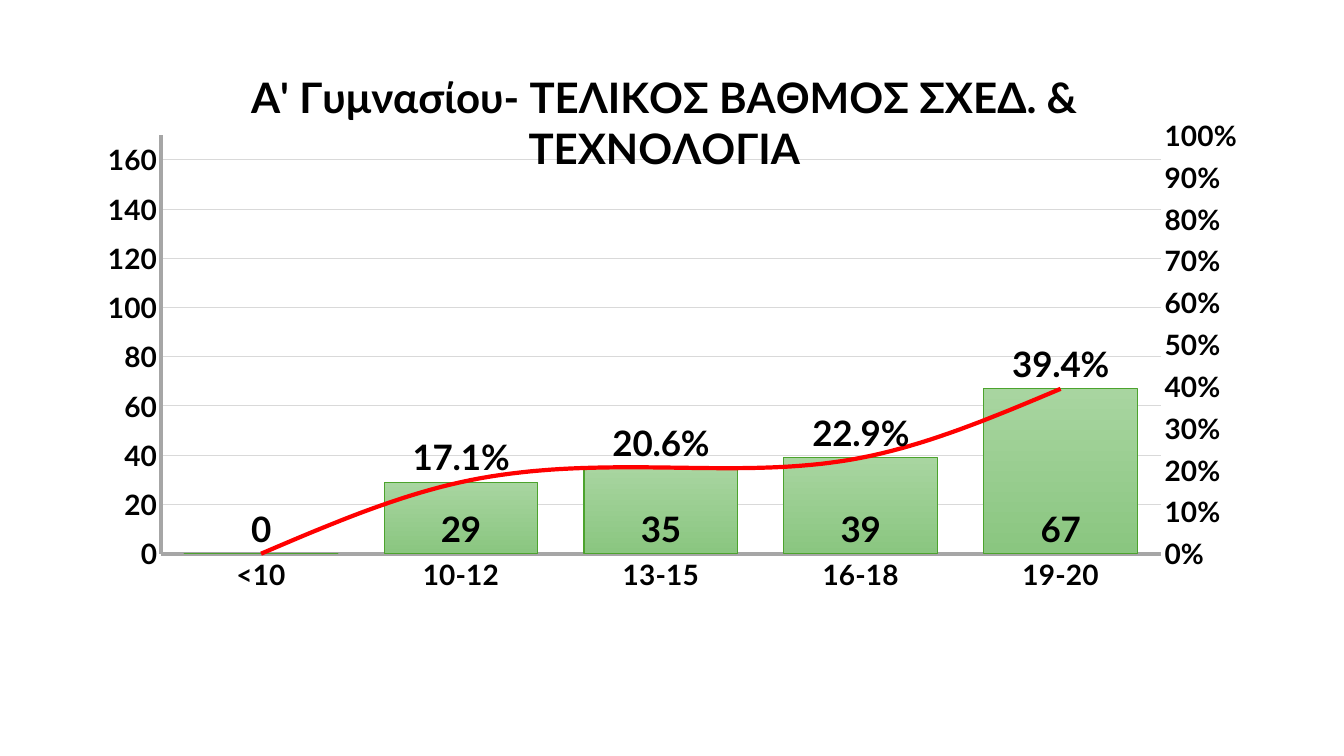
from copy import deepcopy

from lxml import etree
from pptx import Presentation
from pptx.chart.axis import ValueAxis
from pptx.chart.data import CategoryChartData
from pptx.dml.color import RGBColor
from pptx.enum.chart import XL_CHART_TYPE, XL_LABEL_POSITION, XL_MARKER_STYLE, XL_TICK_MARK
from pptx.oxml import parse_xml
from pptx.oxml.ns import nsdecls, qn
from pptx.util import Inches, Pt

COLUMN = XL_CHART_TYPE.COLUMN_CLUSTERED
BASE, ABOVE = XL_LABEL_POSITION.INSIDE_BASE, XL_LABEL_POSITION.ABOVE
NO_MARK = XL_MARKER_STYLE.NONE
NO_TICK = XL_TICK_MARK.NONE
FONT = "Lato"
BLACK, GREY, PALE, RED, GREEN = "000000", "A6A6A6", "D9D9D9", "FF0000", "4CA32D"
SHADES = "A8D5A0", "8AC680"
TITLE = "A' Γυμνασίου- ΤΕΛΙΚΟΣ ΒΑΘΜΟΣ ΣΧΕΔ. & ΤΕΧΝΟΛΟΓΙΑ"
GRADES = "<10", "10-12", "13-15", "16-18", "19-20"
COUNTS = 0, 29, 35, 39, 67
SHARES = 0, 0.171, 0.206, 0.229, 0.394


def color(text):
    return RGBColor.from_string(text)


def style(font, size, bold=True, hue=BLACK):
    font.name, font.size, font.bold = FONT, Pt(size), bold
    font.color.rgb = color(hue)


def write(frame, text, **look):
    run = frame.paragraphs[0].add_run()
    run.text = text
    style(run.font, **look)


def stroke(line, hue, width):
    line.color.rgb = color(hue)
    line.width = Pt(width)


def arrange(node, spot, inner=False, **sides):
    old = node.find(qn("c:layout"))
    if old is not None:
        node.remove(old)
    target = '<c:layoutTarget val="inner"/>' if inner else ""
    modes = "".join(f'<c:{side}Mode val="edge"/>' for side in sides if side in "xy")
    sizes = "".join(f'<c:{side} val="{size}"/>' for side, size in sides.items())
    node.insert(spot, parse_xml(
        f'<c:layout {nsdecls("c")}><c:manualLayout>{target}{modes}{sizes}'
        '</c:manualLayout></c:layout>'))


def set_axis(axis, low=None, high=None):
    axis.major_tick_mark = axis.minor_tick_mark = NO_TICK
    style(axis.tick_labels.font, 20)
    stroke(axis.format.line, GREY, 3)
    if high is not None:
        axis.minimum_scale, axis.maximum_scale = low, high


def set_label(series, place, form):
    labels = series.data_labels
    labels.show_value = True
    labels.position = place
    labels.number_format, labels.number_format_is_linked = form, False
    style(labels.font, 25)
    return labels


def set_value(node, tag, value):
    node.find(qn(tag)).set("val", value)


def add_right(chart):
    area = chart.plots[0]._element.getparent()
    bars = area.find(qn("c:barChart"))
    share = bars.findall(qn("c:ser"))[1]
    flag = share.find(qn("c:invertIfNegative"))
    if flag is not None:
        share.remove(flag)
    lines = parse_xml(
        f'<c:lineChart {nsdecls("c")}><c:grouping val="standard"/>'
        '<c:varyColors val="0"/><c:marker val="1"/>'
        '<c:axId val="501"/><c:axId val="502"/></c:lineChart>')
    lines.insert(2, share)
    bars.addnext(lines)
    base, side = (deepcopy(area.find(qn(tag))) for tag in ("c:catAx", "c:valAx"))
    for node, own, cross in ((base, "501", "502"), (side, "502", "501")):
        set_value(node, "c:axId", own)
        set_value(node, "c:crossAx", cross)
    set_value(base, "c:delete", "1")
    set_value(side, "c:axPos", "r")
    set_value(side, "c:crosses", "max")
    area.find(qn("c:valAx")).addnext(side)
    side.addnext(base)
    axis = ValueAxis(side)
    axis.has_major_gridlines = False
    set_axis(axis, 0, 1)
    axis.major_unit = 0.1
    axis.format.line.fill.background()
    axis.tick_labels.number_format = "0%"
    axis.tick_labels.number_format_is_linked = False


def set_bars(plot):
    plot.gap_width = 30
    plot.vary_by_categories = False
    count = plot.series[0]
    fill = count.format.fill
    fill.gradient()
    fill.gradient_angle = 270
    for stop, hue in zip(fill.gradient_stops, SHADES):
        stop.color.rgb = color(hue)
    stroke(count.format.line, GREEN, 0.75)
    set_label(count, BASE, "0")


def set_curve(plot):
    share = plot.series[0]
    share.smooth = True
    share.marker.style = NO_MARK
    stroke(share.format.line, RED, 3)
    labels = set_label(share, ABOVE, "0.0%")
    first = etree.Element(qn("c:dLbl"))
    for tag, value in (("c:idx", "0"), ("c:delete", "1")):
        etree.SubElement(first, qn(tag)).set("val", value)
    labels._element.insert(0, first)


def add_grades(slide, left, top, width, height):
    data = CategoryChartData()
    data.categories = GRADES
    data.add_series("Series 1", COUNTS)
    data.add_series("Series 2", SHARES)
    box = [Inches(side) for side in (left, top, width, height)]
    chart = slide.shapes.add_chart(COLUMN, *box, data).chart
    style(chart.font, 10, bold=False)
    chart.has_legend = False
    chart.has_title = True
    title = chart.chart_title
    write(title.text_frame, TITLE, size=30)
    arrange(title._element, 1, x=0.13, y=0.02)
    set_value(title._element, "c:overlay", "1")
    set_axis(chart.category_axis)
    values = chart.value_axis
    set_axis(values, 0, 170)
    stroke(values.major_gridlines.format.line, PALE, 0.75)
    add_right(chart)
    bars, curve = chart.plots
    set_bars(bars)
    set_curve(curve)
    arrange(bars._element.getparent(), 0, inner=True, x=0.059, y=0.139, w=0.862, h=0.661)


def main():
    deck = Presentation()
    deck.slide_width, deck.slide_height = Inches(13.33), Inches(7.5)
    slide = deck.slides.add_slide(deck.slide_layouts[6])
    add_grades(slide, 0.92, 0.47, 11.5, 6.28)
    deck.save("out.pptx")


if __name__ == "__main__":
    main()
